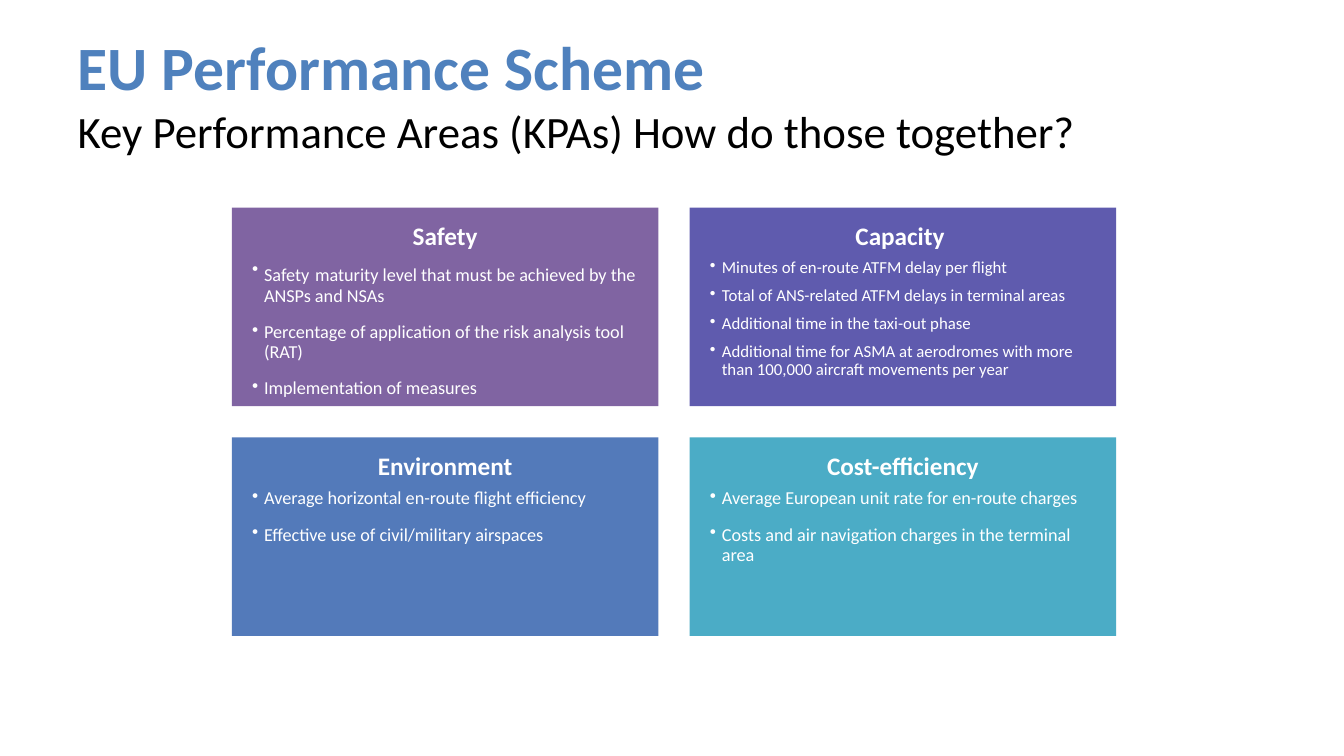
"""Build the slide on the four key performance areas of the EU scheme."""
import pptx
import pptx.util
import pptx.dml.color
import pptx.enum.shapes
import pptx.enum.text
import lxml.etree
from pptx.oxml.ns import qn

Inches, Pt = pptx.util.Inches, pptx.util.Pt
ALIGN = pptx.enum.text.PP_ALIGN
ANCHOR = pptx.enum.text.MSO_ANCHOR

TITLE = "EU Performance Scheme"
SUB = "Key Performance Areas (KPAs) How do those together?"
AREAS = [
    ("Safety", "8064A2", 13, 12, [
        [("Safety", 13), (" ", 18),
         ("maturity level that must be achieved by the ANSPs and NSAs", 13)],
        "Percentage of application of the risk analysis tool (RAT)",
        "Implementation of measures"]),
    ("Capacity ", "5F5BAE", 12, 7, [
        "Minutes of en-route ATFM delay per flight",
        "Total of ANS-related ATFM delays in terminal areas",
        "Additional time in the taxi-out phase",
        "Additional time for ASMA at aerodromes with more than "
        "100,000 aircraft movements per year"]),
    ("Environment", "537ABA", 13, 12, [
        "Average horizontal en-route flight efficiency",
        "Effective use of civil/military airspaces"]),
    ("Cost-efficiency", "4BACC6", 13, 12, [
        "Average European unit rate for en-route charges",
        "Costs and air navigation charges in the terminal area"]),
]
LEFT, TOP, WIDE, HIGH, GAP = 2.3, 2.06, 4.23, 1.97, 0.31


def color(code):
    return pptx.dml.color.RGBColor.from_string(code)


def write(para, text, size=13, bold=False, tint="FFFFFF"):
    run = para.add_run()
    run.text = text
    run.font.name = "Calibri"
    run.font.size = Pt(size)
    run.font.bold = bold
    run.font.color.rgb = color(tint)


def bullet(para):
    props = para._p.get_or_add_pPr()
    props.set("marL", str(Inches(0.12)))
    props.set("indent", str(-Inches(0.12)))
    lxml.etree.SubElement(props, qn("a:buChar")).set("char", "•")


def finish(para, size):
    end = lxml.etree.SubElement(para._p, qn("a:endParaRPr"))
    end.set("sz", str(size * 100))


def card(slide, left, top, area):
    name, fill, size, after, items = area
    box = slide.shapes.add_shape(
        pptx.enum.shapes.MSO_SHAPE.RECTANGLE,
        Inches(left), Inches(top), Inches(WIDE), Inches(HIGH))
    box.shadow.inherit = False
    box.fill.solid()
    box.fill.fore_color.rgb = color(fill)
    box.line.fill.background()
    frame = box.text_frame
    frame.word_wrap = True
    frame.vertical_anchor = ANCHOR.TOP
    frame.margin_left = frame.margin_right = frame.margin_bottom = Inches(0.2)
    frame.margin_top = Inches(0.16)
    head = frame.paragraphs[0]
    head.alignment = ALIGN.CENTER
    head.line_spacing = 0.9
    head.space_after = Pt(6)
    write(head, name, size=18, bold=True)
    for item in items:
        para = frame.add_paragraph()
        bullet(para)
        para.level = 1
        para.alignment = ALIGN.LEFT
        para.line_spacing = 0.9
        para.space_after = Pt(after)
        runs = [(item, size)] if isinstance(item, str) else item
        for text, points in runs:
            write(para, text, size=points)
        finish(para, size)


def main():
    deck = pptx.Presentation()
    deck.slide_width, deck.slide_height = Inches(13.33), Inches(7.5)
    slide = deck.slides.add_slide(deck.slide_layouts[5])
    title = slide.shapes.title
    title.left, title.top = Inches(0.67), Inches(0.3)
    title.width, title.height = Inches(12), Inches(1.25)
    frame = title.text_frame
    frame.auto_size = pptx.enum.text.MSO_AUTO_SIZE.NONE
    frame.vertical_anchor = ANCHOR.MIDDLE
    para = frame.paragraphs[0]
    para.alignment = ALIGN.LEFT
    write(para, TITLE, size=44, bold=True, tint="4F81BD")
    para.add_line_break()
    write(para, SUB, size=32, tint="000000")
    for spot, area in enumerate(AREAS):
        row, col = divmod(spot, 2)
        card(slide, LEFT + col * (WIDE + GAP), TOP + row * (HIGH + GAP), area)
    deck.save("out.pptx")


if __name__ == "__main__":
    main()
